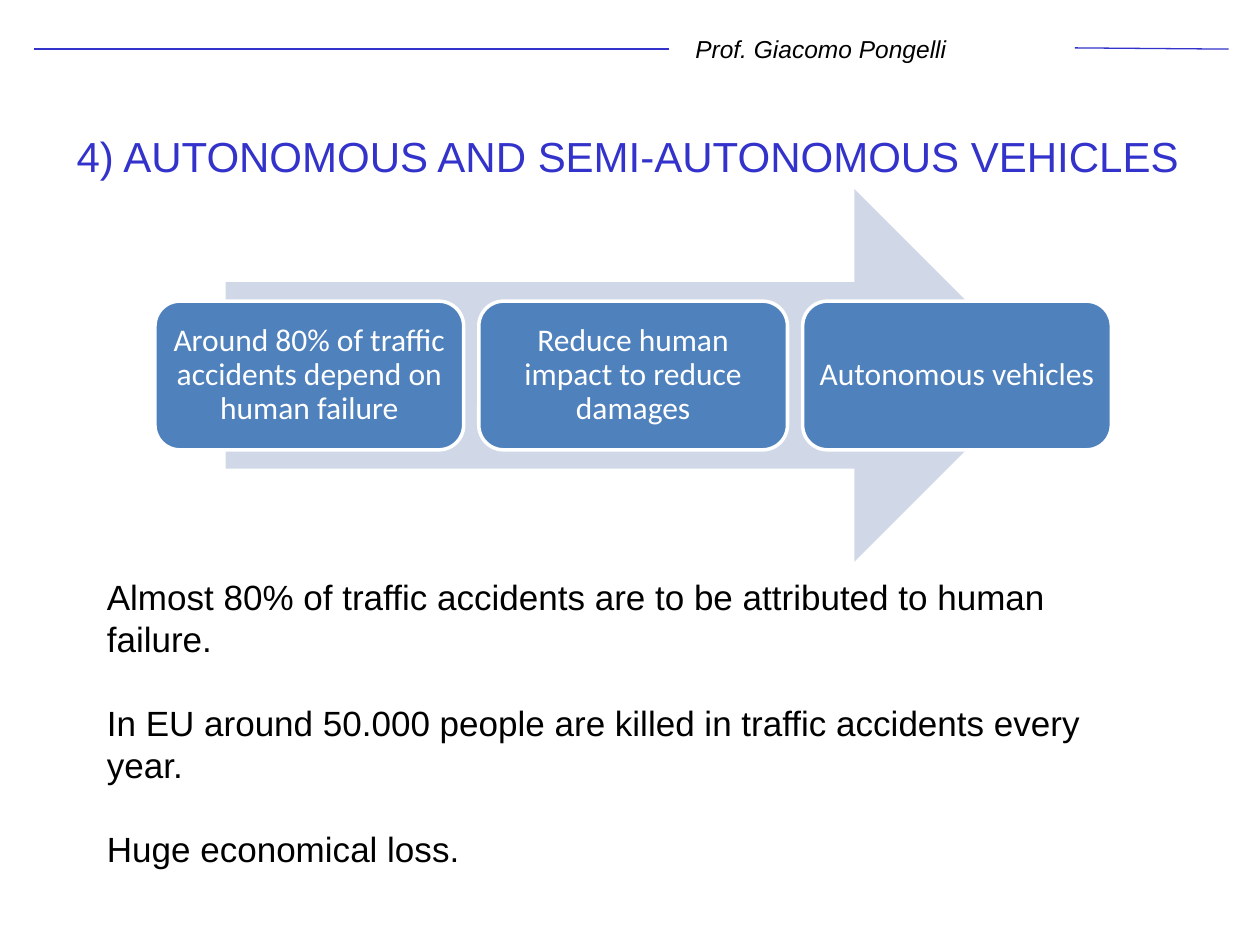
from pptx import Presentation
from pptx.dml.color import RGBColor
from pptx.enum.shapes import MSO_CONNECTOR, MSO_SHAPE
from pptx.enum.text import MSO_ANCHOR, PP_ALIGN
from pptx.oxml.ns import qn
from pptx.util import Inches, Pt
from lxml import etree

STRAIGHT = MSO_CONNECTOR.STRAIGHT
ARROW, ROUNDED = MSO_SHAPE.RIGHT_ARROW, MSO_SHAPE.ROUNDED_RECTANGLE
TOP, MIDDLE = MSO_ANCHOR.TOP, MSO_ANCHOR.MIDDLE
LEFT, CENTER = PP_ALIGN.LEFT, PP_ALIGN.CENTER

WIDTH, HEIGHT = 10, 7.5
BLUE, BLACK, WHITE = "3333CC", "000000", "FFFFFF"
ARROW_FILL, STEP_FILL = "D0D8E8", "4F81BD"

AUTHOR = "Prof. Giacomo Pongelli"
TITLE = "4) AUTONOMOUS AND SEMI-AUTONOMOUS VEHICLES"
STEPS = [
    "Around 80% of traffic accidents depend on human failure",
    "Reduce human impact to reduce damages",
    "Autonomous vehicles",
]
REMARKS = [
    "Almost 80% of traffic accidents are to be attributed to human failure.",
    "In EU around 50.000 people are killed in traffic accidents every year.",
    "Huge economical loss.",
]
HEADER_RULES = [(0.27, 0.39, 5.31, 0.39), (8.53, 0.38, 9.75, 0.39)]
ARROW_AREA = (1.79, 1.5, 6.47, 2.96)
STEP_LEFT, STEP_WIDTH, STEP_HEIGHT, STEP_PITCH = 1.23, 2.45, 1.18, 2.57


def color(value):
    return RGBColor.from_string(value)


def write(shape, lines, size, ink, font="Arial", align=LEFT, anchor=TOP,
          italic=False, gap=0):
    frame = shape.text_frame
    frame.word_wrap = True
    frame.vertical_anchor = anchor
    frame.text = "\n".join(lines)
    for index, para in enumerate(frame.paragraphs):
        para.alignment = align
        para.space_before = Pt(gap if index else 0)
        for span in para.runs:
            span.font.name = font
            span.font.size = Pt(size)
            span.font.italic = italic
            span.font.color.rgb = color(ink)
    return frame


def add_text(page, area, lines, size, ink, **style):
    box = page.shapes.add_textbox(*map(Inches, area))
    write(box, lines, size, ink, **style)


def add_block(page, kind, area, fill):
    block = page.shapes.add_shape(kind, *map(Inches, area))
    block.shadow.inherit = False
    block.fill.solid()
    block.fill.fore_color.rgb = color(fill)
    block.line.fill.background()
    return block


def add_rule(page, ends):
    rule = page.shapes.add_connector(STRAIGHT, *map(Inches, ends))
    rule.line.color.rgb = color(BLUE)
    rule.line.width = Pt(0.75)
    etree.SubElement(rule.element.spPr, qn("a:effectLst"))


def add_step(page, area, label):
    step = add_block(page, ROUNDED, area, STEP_FILL)
    step.line.color.rgb = color(WHITE)
    step.line.width = Pt(2)
    frame = write(step, [label], 18, WHITE, font="Calibri", align=CENTER,
                  anchor=MIDDLE)
    frame.margin_left = frame.margin_right = Inches(0.07)
    frame.margin_top = frame.margin_bottom = Inches(0.07)
    frame.paragraphs[0].line_spacing = 0.9


def main():
    """Build the slide on autonomous vehicles and save it."""
    deck = Presentation()
    deck.slide_width, deck.slide_height = Inches(WIDTH), Inches(HEIGHT)
    page = deck.slides.add_slide(deck.slide_layouts[6])

    for ends in HEADER_RULES:
        add_rule(page, ends)
    add_text(page, (5.42, 0.22, 2.46, 0.34), [AUTHOR], 14, BLACK, italic=True)
    add_text(page, (0.75, 4.65, 8.5, 2.17), REMARKS, 20, BLACK,
             anchor=MIDDLE, gap=24)
    add_text(page, (0.51, 0.99, 9.06, 0.5), [TITLE], 24, BLUE)

    add_block(page, ARROW, ARROW_AREA, ARROW_FILL)
    step_top = ARROW_AREA[1] + (ARROW_AREA[3] - STEP_HEIGHT) / 2
    for index, label in enumerate(STEPS):
        left = STEP_LEFT + index * STEP_PITCH
        add_step(page, (left, step_top, STEP_WIDTH, STEP_HEIGHT), label)

    deck.save("out.pptx")


if __name__ == "__main__":
    main()
